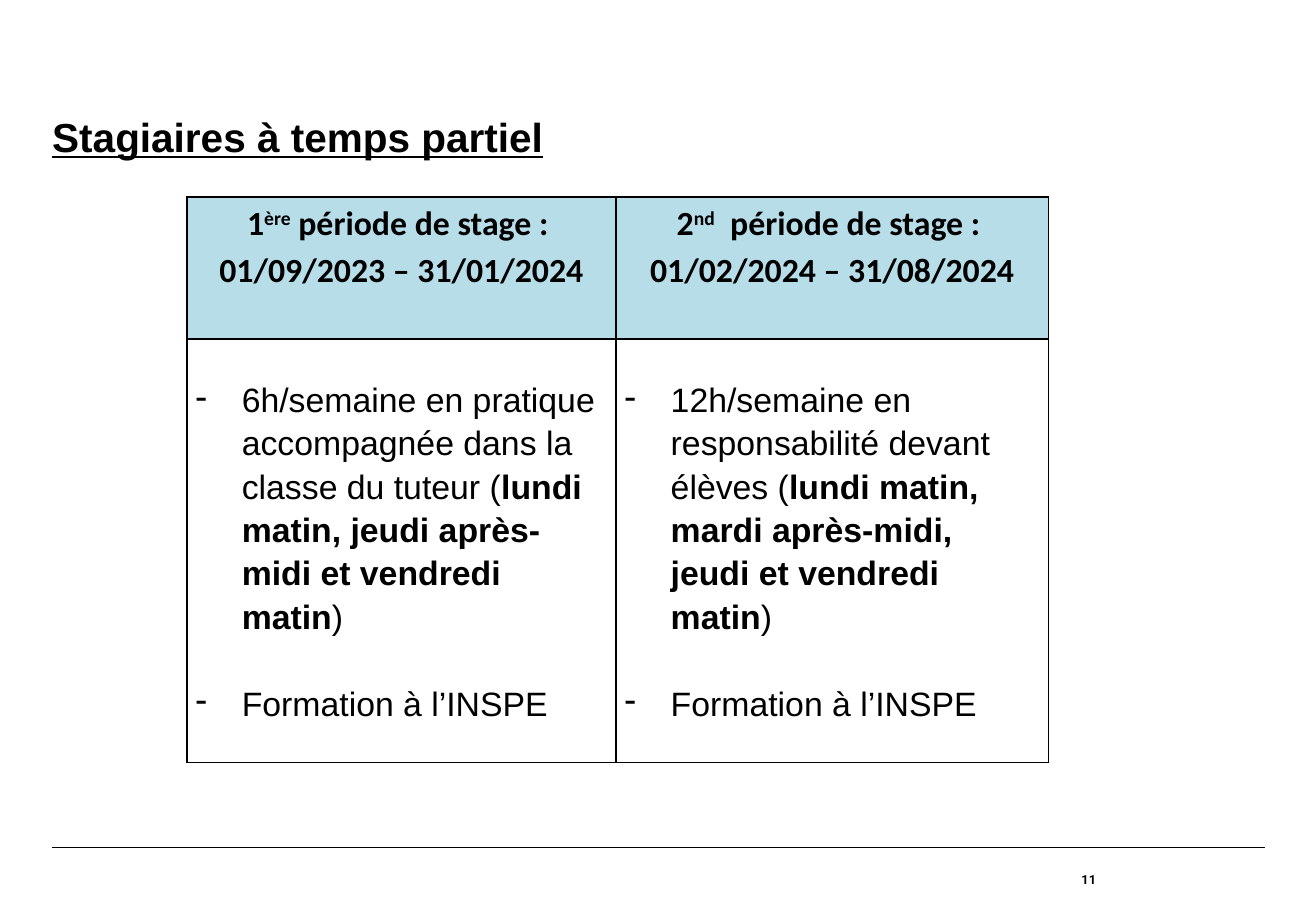
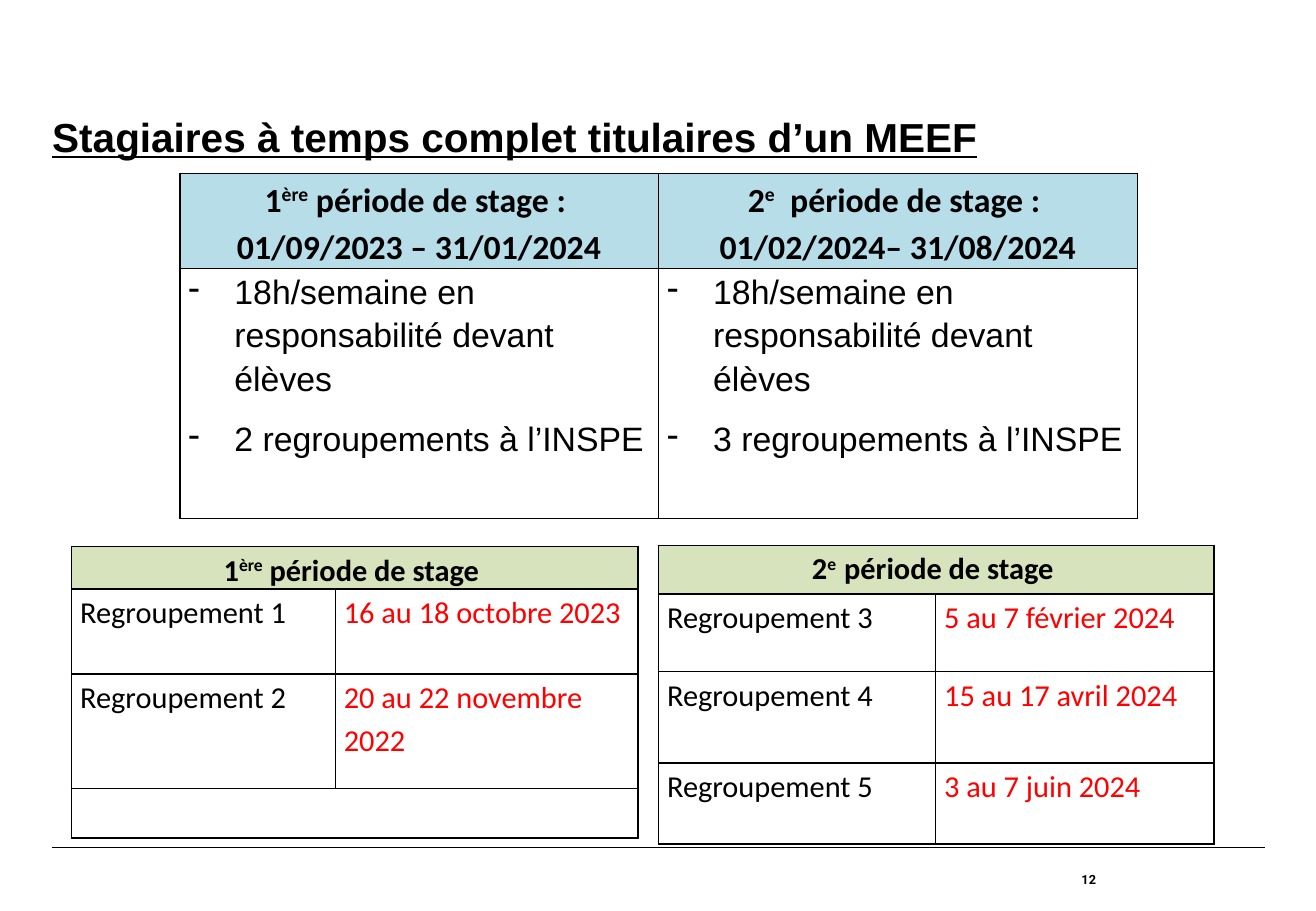
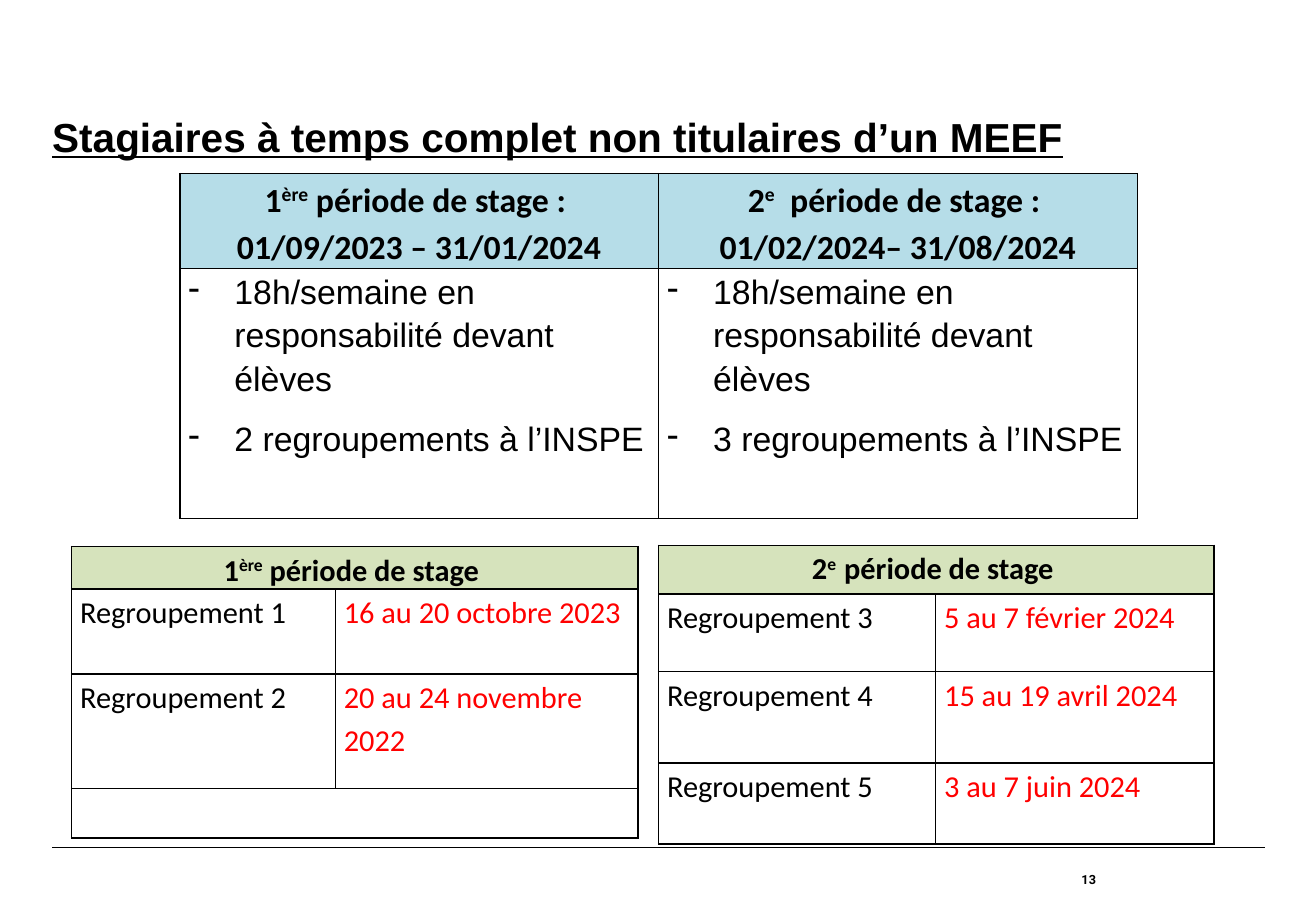
from dataclasses import dataclass, field

from lxml.etree import SubElement
from pptx import Presentation
from pptx.dml.color import RGBColor
from pptx.enum.shapes import MSO_CONNECTOR
from pptx.enum.text import MSO_ANCHOR, PP_ALIGN
from pptx.oxml.ns import qn
from pptx.util import Inches, Pt


def rgb(code):
    return RGBColor.from_string(code)


def style(name, size, bold=False, ink="000000", line=False, **para):
    return {
        "font": {"name": name, "size": Pt(size), "bold": bold, "underline": line},
        "ink": ink,
        "para": para,
    }


@dataclass
class Theme:
    ink: str = "000000"
    blue: str = "B6DDE8"
    green: str = "D6E3BC"
    thin: float = 0.8
    edge: float = 1
    pad: float = 0.07
    hang: float = 0.38
    text: dict = field(default_factory=lambda: {
        "title": style("Arial", 24, True, line=True, space_after=Pt(5)),
        "page": style("Roboto", 7.5, True, alignment=PP_ALIGN.RIGHT),
        "head": style("Calibri", 20, True, alignment=PP_ALIGN.CENTER, line_spacing=1.15),
        "sub": style("Calibri", 18, True, alignment=PP_ALIGN.CENTER, line_spacing=1.15),
        "label": style("Calibri", 18, alignment=PP_ALIGN.JUSTIFY, line_spacing=1.15),
        "date": style("Calibri", 18, ink="FF0000", line_spacing=1.15),
        "item": style("Arial", 20, line_spacing=1.15),
    })


class Deck:
    def __init__(self, theme):
        self.theme = theme
        self.show = Presentation()
        self.show.slide_width, self.show.slide_height = Inches(10.83), Inches(7.5)
        self.slide = None

    def page(self, title, number):
        self.slide = self.show.slides.add_slide(self.show.slide_layouts[6])
        self.rule(0.43, 6.98, 10.41)
        self.label(7.42, 6.98, 1.6, 0.52, str(number), "page", MSO_ANCHOR.MIDDLE)
        self.label(0.43, 0.92, 9.98, 0.45, title, "title", MSO_ANCHOR.TOP)

    def rule(self, left, top, right):
        rule = self.slide.shapes.add_connector(
            MSO_CONNECTOR.STRAIGHT, Inches(left), Inches(top), Inches(right), Inches(top))
        rule.line.color.rgb = rgb(self.theme.ink)
        rule.line.width = Pt(self.theme.thin)
        SubElement(rule._element.spPr, qn("a:effectLst"))

    def label(self, left, top, width, height, text, kind, anchor):
        box = self.slide.shapes.add_textbox(*map(Inches, (left, top, width, height)))
        frame = box.text_frame
        form = {"word_wrap": True, "vertical_anchor": anchor, "margin_left": 0,
                "margin_right": 0, "margin_top": 0, "margin_bottom": 0}
        for key, value in form.items():
            setattr(frame, key, value)
        self.fill(frame, [text], kind)

    def fill(self, frame, lines, kind, gap=0):
        look = self.theme.text[kind]
        for i, line in enumerate(lines):
            para = frame.add_paragraph() if i else frame.paragraphs[0]
            for key, value in look["para"].items():
                setattr(para, key, value)
            if i and gap:
                para.space_before = Pt(gap)
            if kind == "item":
                self.dash(para)
            for j, part in enumerate(line.split("|")):
                if part:
                    self.run(para, part, look, kind, j % 2 == 1)

    def run(self, para, text, look, kind, marked):
        run = para.add_run()
        run.text = text
        for key, value in look["font"].items():
            setattr(run.font, key, value)
        run.font.color.rgb = rgb(look["ink"])
        if marked and kind == "item":
            run.font.bold = True
        elif marked:
            run._r.get_or_add_rPr().set("baseline", "30000")

    def dash(self, para):
        props = para._p.get_or_add_pPr()
        props.set("marL", str(Inches(self.theme.hang)))
        props.set("indent", str(-Inches(self.theme.hang)))
        SubElement(props, qn("a:buChar"), char="-")

    def grid(self, left, top, cols, rows):
        frame = self.slide.shapes.add_table(
            len(rows), len(cols), Inches(left), Inches(top),
            Inches(sum(cols)), Inches(sum(rows)))
        table = frame.table
        table.first_row = table.horz_banding = False
        for col, width in zip(table.columns, cols):
            col.width = Inches(width)
        for row, height in zip(table.rows, rows):
            row.height = Inches(height)
        for cell in table.iter_cells():
            cell.margin_left = cell.margin_right = Inches(self.theme.pad)
            cell.margin_top = cell.margin_bottom = 0
            self.edge(cell)
            cell.fill.background()
        return table

    def edge(self, cell):
        props = cell._tc.get_or_add_tcPr()
        for side in ("lnL", "lnR", "lnT", "lnB"):
            line = SubElement(props, qn(f"a:{side}"), w=str(Pt(self.theme.edge)))
            fill = SubElement(line, qn("a:solidFill"))
            SubElement(fill, qn("a:srgbClr"), val=self.theme.ink)

    def paint(self, cell, color):
        cell.fill.solid()
        cell.fill.fore_color.rgb = rgb(color)

    def terms(self, left, top, cols, rows, heads, items, drop=0, gap=0):
        table = self.grid(left, top, cols, rows)
        for i, (head, item) in enumerate(zip(heads, items)):
            cell = table.cell(0, i)
            self.paint(cell, self.theme.blue)
            self.fill(cell.text_frame, head, "head")
            cell = table.cell(1, i)
            cell.margin_top = Inches(drop)
            self.fill(cell.text_frame, item, "item", gap)

    def dates(self, left, top, cols, rows, head, first, days):
        table = self.grid(left, top, cols, rows)
        table.cell(0, 0).merge(table.cell(0, 1))
        self.paint(table.cell(0, 0), self.theme.green)
        self.fill(table.cell(0, 0).text_frame, [head], "sub")
        for i, day in enumerate(days, 1):
            name = f"Regroupement {first + i - 1}"
            self.fill(table.cell(i, 0).text_frame, [name], "label")
            self.fill(table.cell(i, 1).text_frame, [day], "date")
        for i in range(len(days) + 1, len(rows)):
            table.cell(i, 0).merge(table.cell(i, 1))


def main():
    deck = Deck(Theme())
    first = ["1|ère| période de stage : ", "01/09/2023 – 31/01/2024"]

    deck.page("Stagiaires à temps partiel", 11)
    course = "Formation à l’INSPE"
    deck.terms(
        1.54, 1.62, [3.53, 3.56], [1.17, 3.49],
        [first, ["2|nd|  période de stage : ", "01/02/2024 – 31/08/2024"]],
        [["6h/semaine en pratique accompagnée dans la classe du tuteur "
          "(|lundi matin, jeudi après-midi et vendredi matin|)", course],
         ["12h/semaine en responsabilité devant élèves "
          "(|lundi matin, mardi après-midi, jeudi et vendredi matin|)", course]],
        drop=0.31, gap=26)

    second = ["2|e|  période de stage : ", "01/02/2024– 31/08/2024"]
    work = "18h/semaine en responsabilité devant élèves"
    full = [
        ("titulaires", 18, 22, 17),
        ("non titulaires", 20, 24, 19),
    ]
    for number, (who, autumn, winter, spring) in enumerate(full, 12):
        deck.page(f"Stagiaires à temps complet {who} d’un MEEF", number)
        deck.terms(
            1.48, 1.43, [3.94, 3.94], [0.78, 2.06], [first, second],
            [[work, f"{count} regroupements à l’INSPE"] for count in (2, 3)], gap=10)
        deck.dates(
            0.59, 4.5, [2.17, 2.49], [0.35, 0.7, 0.94, 0.41],
            "1|ère| période de stage ", 1,
            [f"16 au {autumn} octobre 2023", f"20 au {winter} novembre 2022"])
        deck.dates(
            5.42, 4.49, [2.28, 2.29], [0.4, 0.64, 0.75, 0.67],
            "2|e  |période de stage ", 3,
            ["5 au 7 février 2024", f"15 au {spring} avril 2024", "3 au 7 juin 2024"])

    deck.show.save("out.pptx")


if __name__ == "__main__":
    main()
